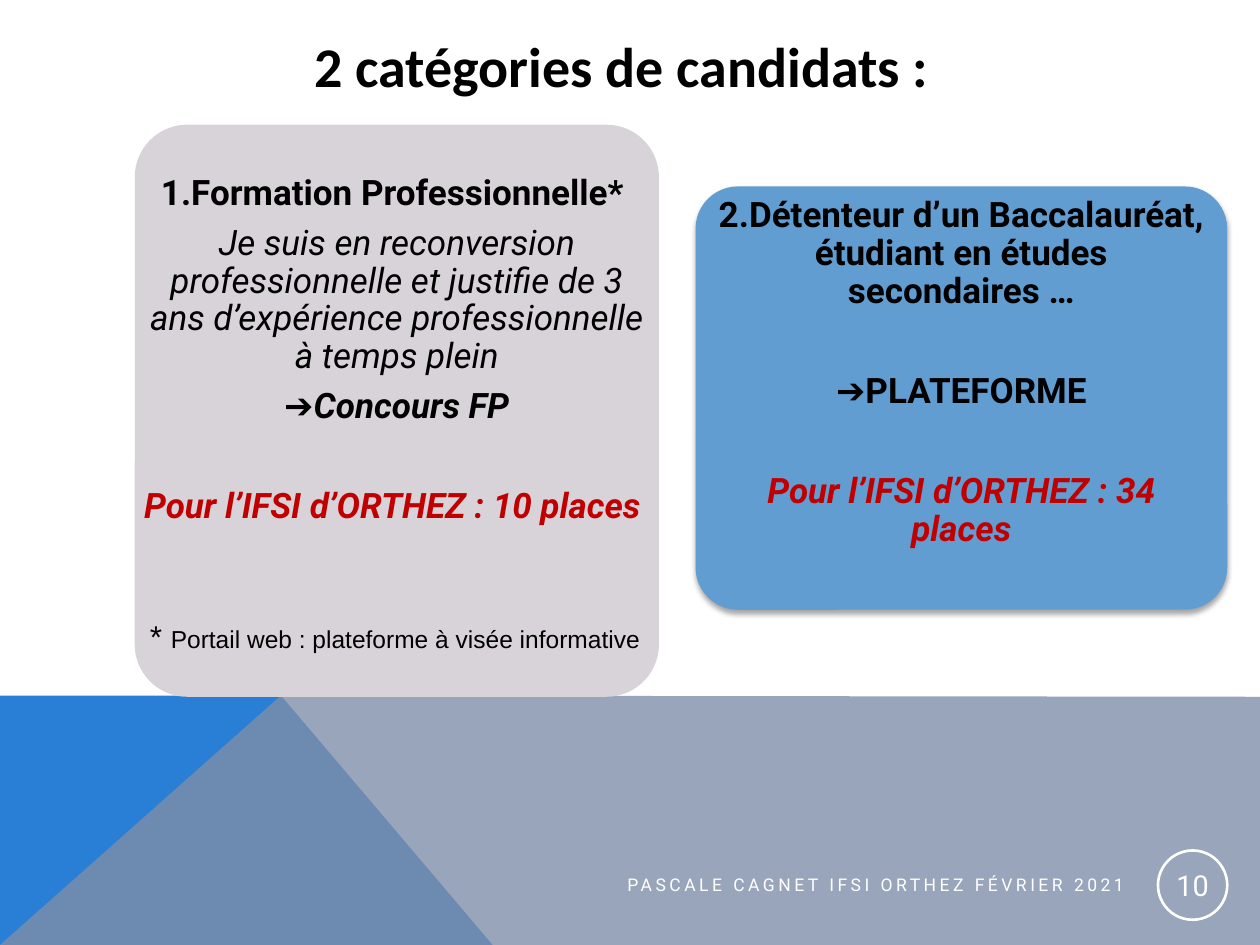
from lxml.etree import SubElement
from pptx import Presentation
from pptx.dml.color import RGBColor
from pptx.enum.shapes import MSO_SHAPE
from pptx.enum.text import MSO_ANCHOR, PP_ALIGN
from pptx.oxml.ns import qn
from pptx.util import Inches, Pt

BLACK, WHITE, RED = "000000", "FFFFFF", "C00000"
CLOSE, APART = 7, 35.5  # space before a paragraph, in points


def color(hex_value):
    return RGBColor.from_string(hex_value)


def finish(sp, fill=None, line=None):
    sp.shadow.inherit = False
    if fill:
        sp.fill.solid()
        sp.fill.fore_color.rgb = color(fill)
    else:
        sp.fill.background()
    if line:
        sp.line.color.rgb = color(line)
        sp.line.width = Pt(1.5)
    else:
        sp.line.fill.background()


def add_shape(s, kind, box, fill=None, line=None):
    sp = s.shapes.add_shape(kind, *map(Inches, box))
    finish(sp, fill, line)
    return sp


def add_panel(s, box, fill):
    sp = add_shape(s, MSO_SHAPE.ROUNDED_RECTANGLE, box, fill)
    sp.adjustments[0] = 0.1
    return sp


def add_polygon(s, points, fill, alpha=None):
    start, *rest = [(Inches(x), Inches(y)) for x, y in points]
    builder = s.shapes.build_freeform(*start)
    builder.add_line_segments(rest, close=True)
    sp = builder.convert_to_shape()
    finish(sp, fill)
    if alpha:
        clr = sp._element.spPr.find(qn("a:solidFill"))[0]
        SubElement(clr, qn("a:alpha"), val=str(alpha * 1000))


def add_soft_shadow(sp):
    effects = sp._element.spPr.find(qn("a:effectLst"))
    shadow = SubElement(effects, qn("a:outerShdw"), blurRad=str(Pt(3.1)),
                        dist=str(Pt(1.8)), dir="5400000", rotWithShape="0")
    clr = SubElement(shadow, qn("a:srgbClr"), val=BLACK)
    SubElement(clr, qn("a:alpha"), val="35000")


def add_run(p, text, size, font="Roboto", fill=BLACK, bold=False, italic=False):
    r = p.add_run()
    r.text = text
    r.font.size = Pt(size)
    r.font.name = font
    r.font.bold = bold
    r.font.italic = italic
    r.font.color.rgb = color(fill)
    return r


def set_frame(tf, anchor, inset=None):
    tf.word_wrap = True
    tf.vertical_anchor = anchor
    if inset is not None:
        tf.margin_left = tf.margin_right = Inches(inset)
        tf.margin_top = tf.margin_bottom = Inches(inset)


def add_text(s, box, align, anchor=MSO_ANCHOR.TOP, inset=None):
    tf = s.shapes.add_textbox(*map(Inches, box)).text_frame
    set_frame(tf, anchor, inset)
    p = tf.paragraphs[0]
    p.alignment = align
    return tf, p


def add_panel_text(s, box, paragraphs):
    """Each paragraph is (space before, runs); a run is (text, style)."""
    tf, p = add_text(s, box, PP_ALIGN.CENTER, inset=0.05)
    for i, (space, runs) in enumerate(paragraphs):
        if i:
            p = tf.add_paragraph()
            p.alignment = PP_ALIGN.CENTER
        p.line_spacing = 0.9
        p.space_before = Pt(space)
        for text, style in runs:
            add_run(p, text, 20, **style)


def main():
    prs = Presentation()
    prs.slide_width, prs.slide_height = Inches(10), Inches(7.5)
    s = prs.slides.add_slide(prs.slide_layouts[6])

    # Bottom band
    add_polygon(s, [(0, 7.5), (0, 5.52), (2.23, 5.52), (3.91, 7.5)], "297FD5")
    add_polygon(s, [(0, 7.5), (2.23, 5.52), (10, 5.53), (10, 7.5)], "7F8FA9", 80)

    bold = {"bold": True}
    italic = {"italic": True}
    strong = {"bold": True, "italic": True}
    places = {**strong, "fill": RED}

    # Right panel: school-leavers
    add_soft_shadow(add_panel(s, (5.52, 1.48, 4.22, 3.36), "629DD1"))
    add_panel_text(s, (5.62, 1.52, 4.02, 3.16), [
        (0, [("2.Détenteur d’un Baccalauréat, étudiant en études secondaires …", bold)]),
        (APART, [("➔PLATEFORME", bold)]),
        (APART, [("Pour l’IFSI d’ORTHEZ : 34 places", places)]),
    ])

    # Left panel: career changers
    add_panel(s, (1.07, 0.99, 4.16, 4.54), "D8D3D9")
    add_panel_text(s, (1.07, 1.34, 4.16, 3), [
        (0, [("1.Formation Professionnelle* ", bold)]),
        (CLOSE, [("Je suis en reconversion professionnelle et justifie de 3 ans "
                  "d’expérience professionnelle à temps plein", italic)]),
        (CLOSE, [("➔", bold), ("Concours FP", strong)]),
        (APART, [("Pour l’IFSI d’ORTHEZ : 10 places ", places)]),
    ])

    # Footer and page number
    _, p = add_text(s, (3.85, 6.87, 5.17, 0.3), PP_ALIGN.RIGHT, MSO_ANCHOR.MIDDLE)
    r = add_run(p, "PASCALE CAGNET IFSI ORTHEZ FÉVRIER 2021", 10, fill=WHITE)
    r.font._element.set("spc", "200")
    badge = add_shape(s, MSO_SHAPE.OVAL, (9.19, 6.75, 0.55, 0.55), line=WHITE)
    set_frame(badge.text_frame, MSO_ANCHOR.MIDDLE, 0.01)
    p = badge.text_frame.paragraphs[0]
    p.alignment = PP_ALIGN.CENTER
    add_run(p, "10", 16.5, fill=WHITE)

    # Title and footnote
    _, p = add_text(s, (1.07, 0.2, 7.73, 0.64), PP_ALIGN.CENTER)
    add_run(p, "2 catégories de candidats :", 32, "Calibri", bold=True)
    _, p = add_text(s, (1.09, 4.85, 4.25, 0.4), PP_ALIGN.LEFT)
    add_run(p, "* ", 18, "Arial")
    add_run(p, "Portail web : plateforme à visée informative", 14, "Arial")

    prs.save("out.pptx")


if __name__ == "__main__":
    main()
